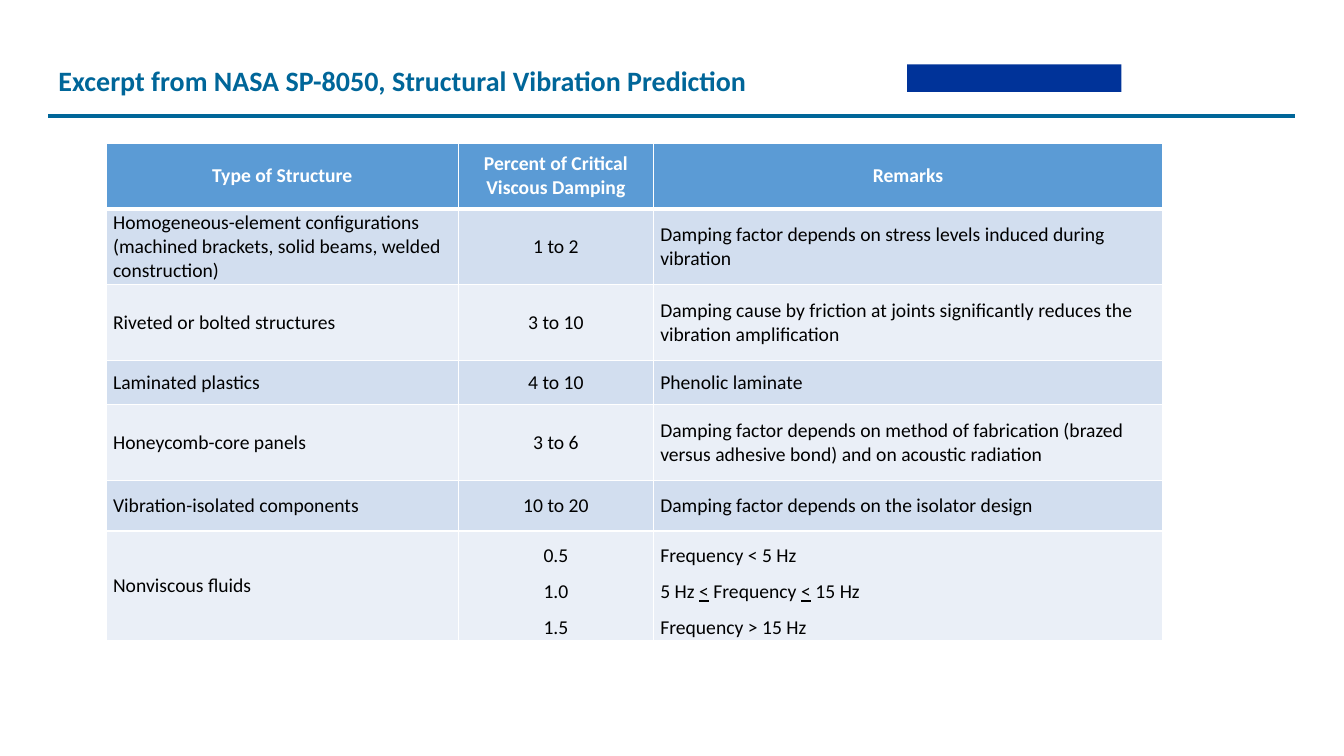
from lxml import etree
from pptx import Presentation
from pptx.dml.color import RGBColor
from pptx.enum.shapes import MSO_CONNECTOR, MSO_SHAPE
from pptx.enum.text import MSO_ANCHOR, MSO_AUTO_SIZE, PP_ALIGN
from pptx.oxml.ns import qn
from pptx.util import Cm, Pt

LEFT, CENTER = PP_ALIGN.LEFT, PP_ALIGN.CENTER
TOP, MIDDLE = MSO_ANCHOR.TOP, MSO_ANCHOR.MIDDLE
FIT_NONE = MSO_AUTO_SIZE.NONE
STRAIGHT = MSO_CONNECTOR.STRAIGHT
RECT = MSO_SHAPE.RECTANGLE

COLORS = {
    "teal": "006699", "navy": "003399", "head": "5B9BD5",
    "odd": "D2DEEF", "even": "EAEFF7", "white": "FFFFFF", "black": "000000",
}
TITLE = {"name": "Calibri", "size": Pt(20), "bold": True}
HEAD = {"name": "Calibri", "size": Pt(14), "bold": True}
BODY = {"name": "Calibri", "size": Pt(14), "bold": False}

COLS = [8.89, 4.9, 12.85]
HEIGHTS = [1.65, 1.91, 1.91, 1.12, 1.91, 1.27, 2.77]
# Text between underscores is underlined.
ROWS = [
    ["Type of Structure", "Percent of Critical Viscous Damping", "Remarks"],
    ["Homogeneous-element configurations (machined brackets, solid beams, "
     "welded construction)", "1 to 2",
     "Damping factor depends on stress levels induced during vibration"],
    ["Riveted or bolted structures", "3 to 10",
     "Damping cause by friction at joints significantly reduces the "
     "vibration amplification"],
    ["Laminated plastics", "4 to 10", "Phenolic laminate"],
    ["Honeycomb-core panels", "3 to 6",
     "Damping factor depends on method of fabrication (brazed versus "
     "adhesive bond) and on acoustic radiation"],
    ["Vibration-isolated components", "10 to 20",
     "Damping factor depends on the isolator design"],
    ["Nonviscous fluids", "0.5\n1.0\n1.5",
     "Frequency < 5 Hz\n5 Hz _<_ Frequency _<_ 15 Hz\nFrequency > 15 Hz"],
]


def color(key):
    return RGBColor.from_string(COLORS[key])


def style(font, values, key):
    for name, value in values.items():
        setattr(font, name, value)
    font.color.rgb = color(key)


def write(frame, text, values, key, align=LEFT):
    lines = text.split("\n")
    for num, line in enumerate(lines):
        para = frame.add_paragraph() if num else frame.paragraphs[0]
        para.alignment = align
        if len(lines) > 1:
            para.line_spacing = 1.5
        for part, piece in enumerate(line.split("_")):
            run = para.add_run()
            run.text = piece
            style(run.font, values, key)
            if part % 2:
                run.font.underline = True


def add_border(cell, head):
    props = cell._tc.get_or_add_tcPr()
    for side in "LRTB":
        width = Pt(3 if head and side == "B" else 1)
        line = etree.SubElement(props, qn(f"a:ln{side}"), w=str(width))
        fill = etree.SubElement(line, qn("a:solidFill"))
        etree.SubElement(fill, qn("a:srgbClr"), val=COLORS["white"])


def add_header(slide, left, top, width):
    title = slide.shapes.title
    title.left, title.top = Cm(left), Cm(top + 0.15)
    title.width, title.height = Cm(20.62), Cm(1.12)
    frame = title.text_frame
    frame.auto_size, frame.word_wrap = FIT_NONE, True
    frame.vertical_anchor = TOP
    write(frame, "Excerpt from NASA SP-8050, Structural Vibration Prediction",
          TITLE, "teal")
    para = frame.paragraphs[0]
    para.line_spacing, para.space_after = 1.0, Pt(2)

    block = slide.shapes.add_shape(RECT, Cm(left + 21.64), Cm(top + 0.3),
                                   Cm(5.4), Cm(0.7))
    block.shadow.inherit = False
    block.fill.solid()
    block.fill.fore_color.rgb = color("navy")
    block.line.fill.background()

    level = Cm(top + 1.6)
    rule = slide.shapes.add_connector(STRAIGHT, Cm(left), level,
                                      Cm(left + width), level)
    rule.line.color.rgb = color("teal")
    rule.line.width = Pt(2.5)
    etree.SubElement(rule._element.spPr, qn("a:effectLst"))


def add_damping(slide, left, top):
    """Place the table of damping values."""
    table = slide.shapes.add_table(
        len(ROWS), len(COLS), Cm(left), Cm(top),
        Cm(sum(COLS)), Cm(sum(HEIGHTS))).table
    for col, width in zip(table.columns, COLS):
        col.width = Cm(width)
    for row, height in zip(table.rows, HEIGHTS):
        row.height = Cm(height)
    for r, texts in enumerate(ROWS):
        head = r == 0
        shade = "head" if head else "odd" if r % 2 else "even"
        for c, text in enumerate(texts):
            cell = table.cell(r, c)
            cell.margin_left = cell.margin_right = Cm(0.18)
            cell.margin_top = cell.margin_bottom = 0
            cell.vertical_anchor = MIDDLE
            add_border(cell, head)
            cell.fill.solid()
            cell.fill.fore_color.rgb = color(shade)
            write(cell.text_frame, text, HEAD if head else BODY,
                  "white" if head else "black",
                  CENTER if head or c == 1 else LEFT)


def main():
    deck = Presentation()
    deck.slide_width, deck.slide_height = Cm(33.87), Cm(19.05)
    slide = deck.slides.add_slide(deck.slide_layouts.get_by_name("Title Only"))
    add_header(slide, 1.22, 1.32, 31.42)
    add_damping(slide, 2.67, 3.61)
    deck.save("out.pptx")


if __name__ == "__main__":
    main()
